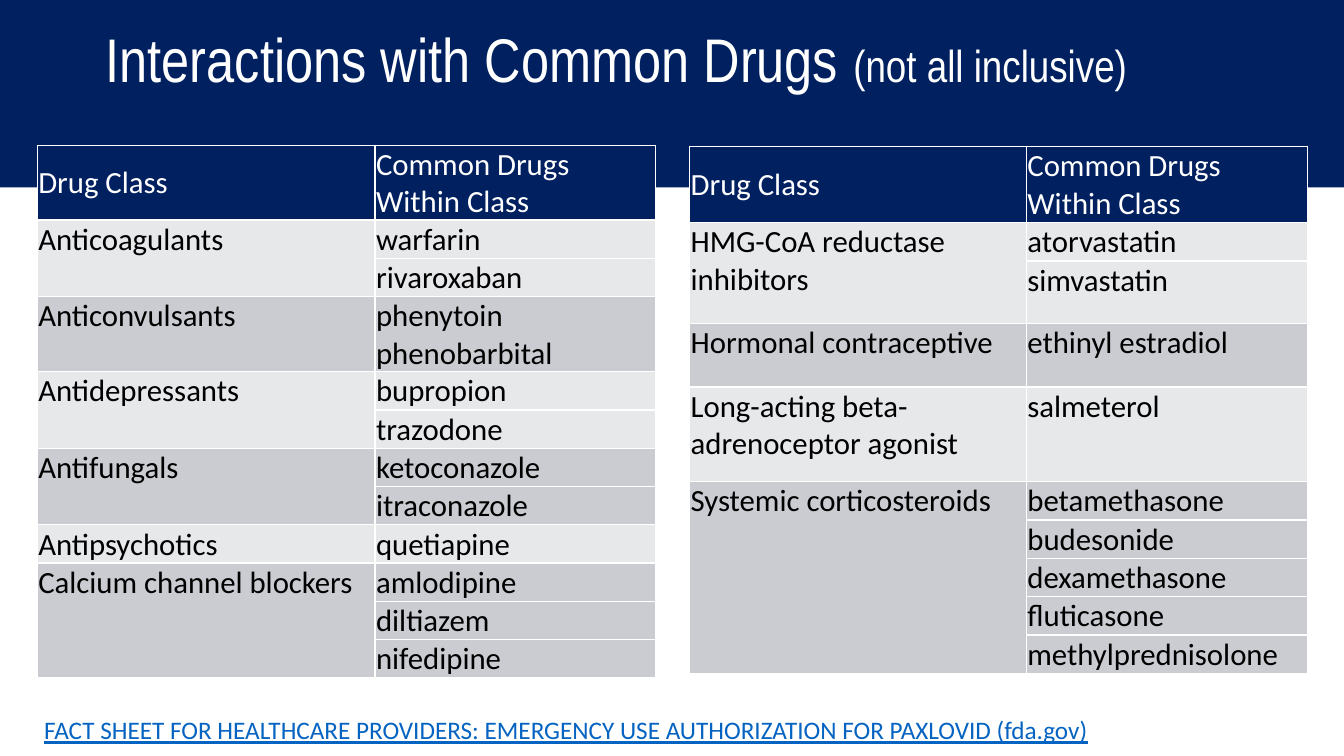
import pptx
import pptx.dml.color
import pptx.enum.shapes
import pptx.enum.text
import pptx.oxml
import pptx.oxml.ns
import pptx.util

Inches = pptx.util.Inches
Anchor = pptx.enum.text.MSO_ANCHOR

NAVY, WHITE, BLACK, LINK = "002060", "FFFFFF", "000000", "0563C1"
BANDS = ("E7E8EA", "CBCCD2")
LINE = 0.38  # height of a row with one line of text


def colour(value):
    return pptx.dml.color.RGBColor.from_string(value)


class Page:
    """Holds the current slide and its text style."""

    def __init__(self, deck):
        self.slide = deck.slides.add_slide(deck.slide_layouts[6])
        self.cell_font = {"name": "Calibri", "size": pptx.util.Pt(22), "bold": False}

    def band(self, left, top, width, height, fill):
        shape = self.slide.shapes.add_shape(
            pptx.enum.shapes.MSO_SHAPE.RECTANGLE,
            Inches(left), Inches(top), Inches(width), Inches(height))
        shape.shadow.inherit = False
        shape.fill.solid()
        shape.fill.fore_color.rgb = colour(fill)
        shape.line.fill.background()

    def add_span(self, para, text, ink, formats):
        span = para.add_run()
        span.text = text
        for name, value in formats.items():
            setattr(span.font, name, value)
        span.font.color.rgb = colour(ink)

    def text(self, left, top, width, height, spans, anchor, spacing=1.0):
        box = self.slide.shapes.add_textbox(
            Inches(left), Inches(top), Inches(width), Inches(height))
        frame = box.text_frame
        frame.word_wrap = True
        frame.vertical_anchor = anchor
        para = frame.paragraphs[0]
        para.line_spacing = spacing
        for text, ink, formats in spans:
            self.add_span(para, text, ink, formats)

    def cell(self, cell, lines, fill, ink, anchor):
        formats = {"margin_left": Inches(0.01), "margin_right": Inches(0.01),
                   "margin_top": Inches(0.01), "margin_bottom": 0,
                   "vertical_anchor": anchor}
        for name, value in formats.items():
            setattr(cell, name, value)
        # White borders on all four sides
        properties = cell._tc.get_or_add_tcPr()
        for side in "LRTB":
            properties.append(pptx.oxml.parse_xml(
                f'<a:ln{side} {pptx.oxml.ns.nsdecls("a")} w="12700"><a:solidFill>'
                f'<a:srgbClr val="{WHITE}"/></a:solidFill></a:ln{side}>'))
        cell.fill.solid()
        cell.fill.fore_color.rgb = colour(fill)
        frame = cell.text_frame
        for index, line in enumerate(lines):
            para = frame.add_paragraph() if index else frame.paragraphs[0]
            self.add_span(para, line, ink, self.cell_font)

    def drug_table(self, left, top, widths, header_height, groups):
        """Each group is a drug class and its rows of (drug names, height)."""
        heights = [header_height] + [height for _, rows in groups for _, height in rows]
        table = self.slide.shapes.add_table(
            len(heights), len(widths), Inches(left), Inches(top),
            Inches(sum(widths)), Inches(sum(heights))).table
        table.first_row = table.horz_banding = False
        for column, width in zip(table.columns, widths):
            column.width = Inches(width)
        for row, height in zip(table.rows, heights):
            row.height = Inches(height)
        for index, heading in enumerate(("Drug Class", "Common Drugs Within Class")):
            self.cell(table.cell(0, index), [heading], NAVY, WHITE, Anchor.MIDDLE)
        first = 1
        for number, (drug_class, rows) in enumerate(groups):
            fill = BANDS[number % 2]
            for offset, (drugs, _) in enumerate(rows):
                label = [] if offset else [drug_class]
                for index, lines in enumerate((label, drugs)):
                    self.cell(table.cell(first + offset, index), lines, fill,
                              BLACK, Anchor.TOP)
            if len(rows) > 1:
                table.cell(first, 0).merge(table.cell(first + len(rows) - 1, 0))
            first += len(rows)


def single_rows(*drugs):
    return [([drug], LINE) for drug in drugs]


def main():
    deck = pptx.Presentation()
    deck.slide_width, deck.slide_height = Inches(13.33), Inches(7.5)
    page = Page(deck)

    # Heading band and title
    page.band(0, 0, 13.33, 1.86, NAVY)
    page.text(0.95, 0, 10.63, 1.25, [
        (text, WHITE, {"name": "Arial Narrow", "size": pptx.util.Pt(size)})
        for text, size in (("Interactions with Common Drugs ", 44),
                           ("(not all inclusive)", 32))], Anchor.MIDDLE, 0.9)

    # Left table
    page.drug_table(0.37, 1.44, (3.35, 2.78), 0.74, [
        ("Anticoagulants", single_rows("warfarin", "rivaroxaban")),
        ("Anticonvulsants", [(["phenytoin", "phenobarbital"], 0.74)]),
        ("Antidepressants", single_rows("bupropion", "trazodone")),
        ("Antifungals", single_rows("ketoconazole", "itraconazole")),
        ("Antipsychotics", single_rows("quetiapine")),
        ("Calcium channel blockers", single_rows("amlodipine", "diltiazem", "nifedipine")),
    ])

    # Right table
    page.drug_table(6.84, 1.45, (3.34, 2.79), 0.76, [
        ("HMG-CoA reductase inhibitors",
         single_rows("atorvastatin") + [(["simvastatin"], 0.62)]),
        ("Hormonal contraceptive", [(["ethinyl estradiol"], 0.63)]),
        ("Long-acting beta-adrenoceptor agonist", [(["salmeterol"], 0.94)]),
        ("Systemic corticosteroids",
         single_rows("betamethasone", "budesonide", "dexamethasone", "fluticasone",
                     "methylprednisolone")),
    ])

    # Reference
    page.text(0.34, 7.04, 12.31, 0.4, [(
        "FACT SHEET FOR HEALTHCARE PROVIDERS: EMERGENCY USE AUTHORIZATION "
        "FOR PAXLOVID (fda.gov)", LINK,
        {"name": "Calibri", "size": pptx.util.Pt(18), "underline": True})], Anchor.TOP)

    deck.save("out.pptx")


if __name__ == "__main__":
    main()
